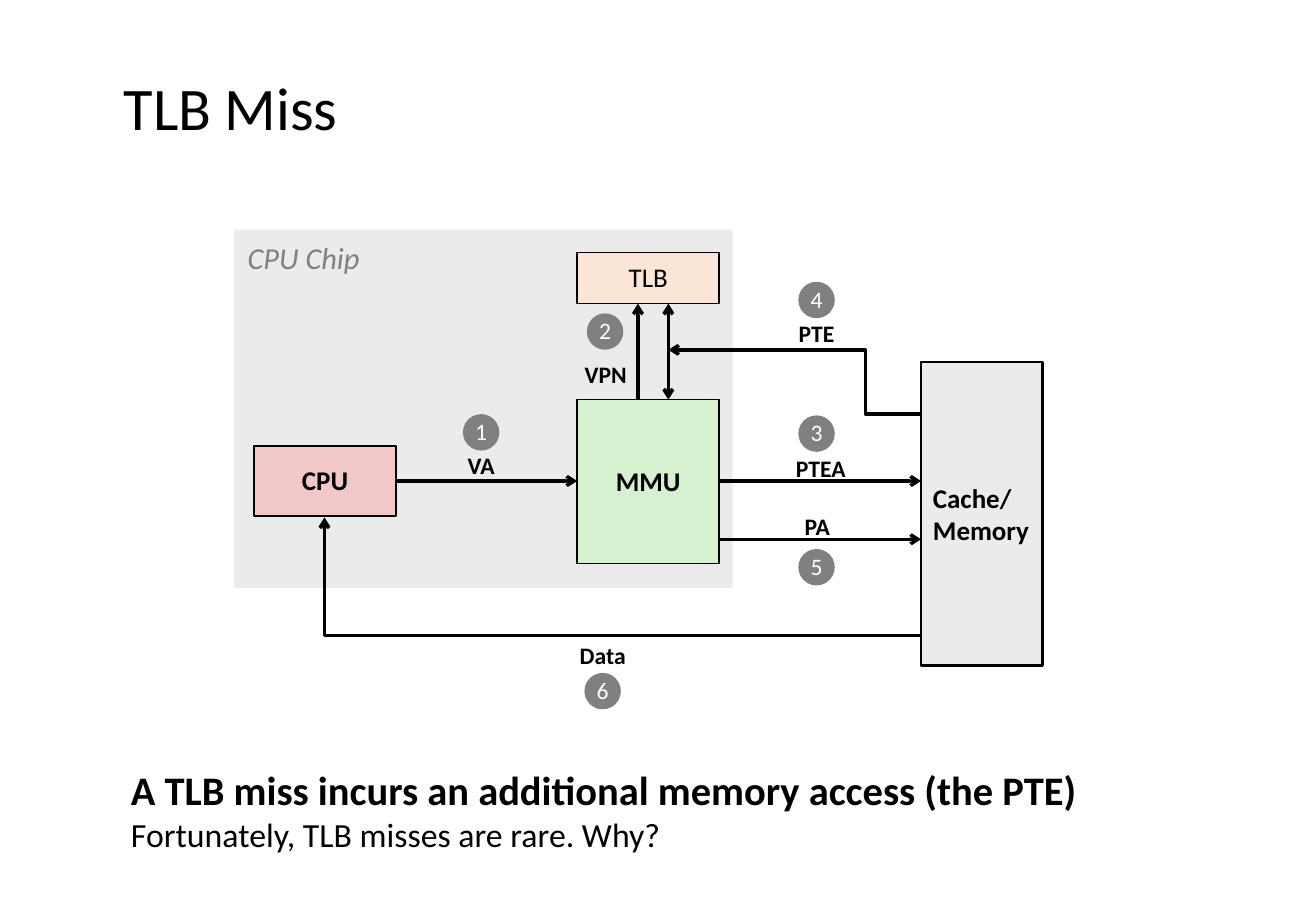
from lxml.etree import SubElement
from pptx import Presentation
from pptx.dml.color import RGBColor
from pptx.enum.shapes import MSO_CONNECTOR, MSO_SHAPE
from pptx.enum.text import MSO_ANCHOR, PP_ALIGN
from pptx.oxml.ns import qn
from pptx.util import Inches, Pt

FONT = "Calibri"
BLACK, WHITE, GRAY, LIGHT_GRAY = "000000", "FFFFFF", "808080", "EBEBEB"
BADGE_SIZE = 0.3


def color(hex_value):
    return RGBColor.from_string(hex_value)


def set_font(font, size, hex_value=BLACK, bold=False, italic=False):
    font.name = FONT
    font.size = Pt(size)
    font.bold = bold
    font.italic = italic
    font.color.rgb = color(hex_value)


def write(shape, text, size, hex_value=BLACK, bold=False, italic=False,
          align=PP_ALIGN.CENTER, spacing=0.98, anchor=MSO_ANCHOR.MIDDLE, wrap=False):
    """Fill a shape with text, one paragraph for each line."""
    frame = shape.text_frame
    frame.word_wrap = wrap
    frame.vertical_anchor = anchor
    frame.text = text
    for para in frame.paragraphs:
        para.alignment = align
        para.line_spacing = spacing
        set_font(para.font, size, hex_value, bold, italic)


def add_block(page, kind, place, fill, line_width=0):
    shape = page.shapes.add_shape(kind, *map(Inches, place))
    shape.shadow.inherit = False
    shape.fill.solid()
    shape.fill.fore_color.rgb = color(fill)
    if line_width:
        shape.line.color.rgb = color(BLACK)
        shape.line.width = Pt(line_width)
    else:
        shape.line.fill.background()
    return shape


def add_text_box(page, place):
    return page.shapes.add_textbox(*map(Inches, place))


def add_badge(page, number, left, top):
    place = (left, top, BADGE_SIZE, BADGE_SIZE)
    badge = add_block(page, MSO_SHAPE.OVAL, place, GRAY)
    write(badge, str(number), 14, WHITE)


def style_arrow(connector, both_ends=False):
    connector.line.color.rgb = color(BLACK)
    connector.line.width = Pt(2)
    line = connector.line._get_or_add_ln()
    for end in ("headEnd", "tailEnd") if both_ends else ("tailEnd",):
        SubElement(line, qn(f"a:{end}"), type="arrow")
    SubElement(connector._element.spPr, qn("a:effectLst"))


def add_arrow(page, start, end, both_ends=False):
    connector = page.shapes.add_connector(
        MSO_CONNECTOR.STRAIGHT, *map(Inches, start + end))
    style_arrow(connector, both_ends)


def add_bent_arrow(page, start, end, preset, bend=None):
    """Draw an elbow arrow that runs left and up from start to end."""
    connector = page.shapes.add_connector(
        MSO_CONNECTOR.ELBOW, *map(Inches, end + start))
    properties = connector._element.spPr
    properties.find(qn("a:xfrm")).set("rot", "10800000")
    geometry = properties.find(qn("a:prstGeom"))
    geometry.set("prst", preset)
    if bend is not None:
        guides = geometry.find(qn("a:avLst"))
        SubElement(guides, qn("a:gd"), name="adj1", fmla=f"val {round(bend * 100000)}")
    style_arrow(connector)


def add_takeaway(page):
    box = add_text_box(page, (0.98, 6.25, 8.43, 1))
    box.text_frame.word_wrap = True
    para = box.text_frame.paragraphs[0]
    para.space_before = Pt(4.8)
    span = para.add_run()
    span.text = "A TLB miss incurs an additional memory access (the PTE)"
    set_font(span.font, 24, bold=True)
    para.add_line_break()
    span = para.add_run()
    span.text = "Fortunately, TLB misses are rare. Why?"
    set_font(span.font, 20)


def main():
    deck = Presentation()
    deck.slide_width, deck.slide_height = Inches(10.83), Inches(7.5)
    page = deck.slides.add_slide(deck.slide_layouts[6])

    add_block(page, MSO_SHAPE.RECTANGLE, (1.93, 1.89, 4.1, 2.95), LIGHT_GRAY)
    write(add_text_box(page, (0.92, 0.48, 9.53, 0.86)), "TLB Miss", 35.8,
          align=PP_ALIGN.LEFT, spacing=0.9, wrap=True)
    write(add_text_box(page, (1.94, 1.92, 1.16, 0.4)), "CPU Chip", 18, GRAY,
          italic=True, align=PP_ALIGN.LEFT, spacing=1, anchor=MSO_ANCHOR.TOP)

    for text, place, fill, bold in (
        ("MMU", (4.75, 3.29, 1.17, 1.35), "D5F1CF", True),
        ("CPU", (2.09, 3.67, 1.17, 0.58), "F1C7C7", True),
        ("TLB", (4.75, 2.08, 1.17, 0.42), "FBE5D6", False),
    ):
        unit = add_block(page, MSO_SHAPE.RECTANGLE, place, fill, 1)
        write(unit, text, 16, bold=bold)
    memory = add_block(page, MSO_SHAPE.RECTANGLE, (7.58, 2.98, 1, 2.5), LIGHT_GRAY, 1.5)
    write(memory, "Cache/\nMemory", 16, bold=True, align=PP_ALIGN.LEFT, spacing=1)

    add_arrow(page, (3.25, 3.96), (4.75, 3.96))
    add_arrow(page, (5.92, 3.96), (7.58, 3.96))
    add_arrow(page, (5.92, 4.44), (7.58, 4.44))
    add_arrow(page, (5.25, 3.29), (5.25, 2.5))
    add_arrow(page, (5.5, 2.5), (5.5, 3.29), both_ends=True)
    add_bent_arrow(page, (7.58, 5.23), (2.67, 4.26), "bentConnector2")
    add_bent_arrow(page, (7.58, 3.41), (5.5, 2.88), "bentConnector3", 0.22)

    for text, left, top, width in (
        ("VA", 3.75, 3.67, 0.42),
        ("VPN", 4.71, 2.92, 0.55),
        ("PTEA", 6.45, 3.69, 0.61),
        ("PTE", 6.47, 2.58, 0.5),
        ("PA", 6.52, 4.17, 0.41),
        ("Data", 4.67, 5.23, 0.58),
    ):
        write(add_text_box(page, (left, top, width, 0.34)), text, 14, bold=True)

    badges = ((3.81, 3.41), (4.83, 2.58), (6.57, 3.42),
              (6.57, 2.32), (6.57, 4.52), (4.81, 5.54))
    for number, (left, top) in enumerate(badges, start=1):
        add_badge(page, number, left, top)

    add_takeaway(page)
    deck.save("out.pptx")


if __name__ == "__main__":
    main()
